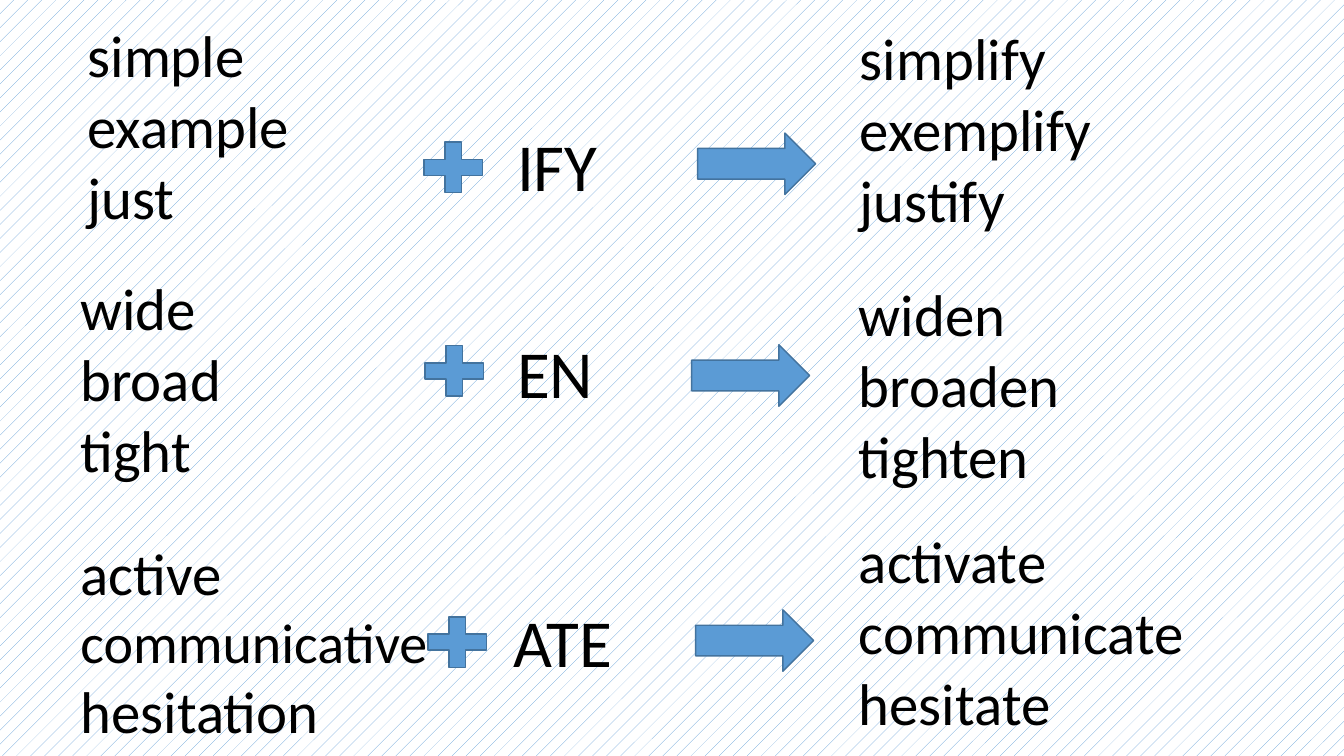
from pptx import Presentation
from pptx.dml.color import RGBColor
from pptx.enum.dml import MSO_PATTERN as Pattern
from pptx.enum.shapes import MSO_SHAPE as Shape
from pptx.util import Pt

PX = 9144  # 100 px to the inch
BLUE, EDGE, BLACK, WHITE = "5B9BD5", "43739E", "000000", "FFFFFF"

# Base words, suffix and new words, each with its left, top (and width)
ROWS = [
    dict(base=("simple\nexample\njust", 77, 14, 354), plus=(410, 132),
         suffix=("IFY", 503, 118), arrow=(692, 132),
         verbs=("simplify\nexemplify\njustify", 843, 17)),
    dict(base=("wide\nbroad\ntight", 70, 265, 285), plus=(411, 334),
         suffix=("EN", 503, 324), arrow=(686, 342),
         verbs=("widen\nbroaden\ntighten", 842, 271)),
    dict(base=("active\ncommunicative\nhesitation", 70, 528, 667), plus=(414, 603),
         suffix=("ATE", 499, 591), arrow=(690, 605),
         verbs=("activate\ncommunicate\nhesitate", 842, 516)),
]


def color(code):
    return RGBColor.from_string(code)


def px(*sizes):
    return [size * PX for size in sizes]


def add_text(slide, words, left, top, width, height, size):
    box = slide.shapes.add_textbox(*px(left, top, width, height))
    frame = box.text_frame
    frame.word_wrap = True
    frame.text = words
    for para in frame.paragraphs:
        for run in para.runs:
            run.font.name = "Calibri"
            run.font.size = Pt(size)
            run.font.color.rgb = color(BLACK)
    return frame


def add_sign(slide, kind, left, top, width, height):
    sign = slide.shapes.add_shape(kind, *px(left, top, width, height))
    sign.shadow.inherit = False
    sign.fill.solid()
    sign.fill.fore_color.rgb = color(BLUE)
    sign.line.color.rgb = color(EDGE)
    sign.line.width = Pt(1)


def add_row(slide, base, plus, suffix, arrow, verbs):
    frame = add_text(slide, *base, 222, 42)
    # The longest word is set a little smaller
    for para in frame.paragraphs:
        if para.text == "communicative":
            para.runs[0].font.size = Pt(40)
    add_text(slide, *suffix, 120, 91, 48)
    add_text(slide, *verbs, 480, 222, 42)
    add_sign(slide, Shape.RIGHT_ARROW, *arrow, 117, 61)
    add_sign(slide, Shape.MATH_PLUS, *plus, 79, 68)


def main():
    deck = Presentation()
    deck.slide_width, deck.slide_height = px(1333, 750)
    slide = deck.slides.add_slide(deck.slide_layouts[6])

    # Patterned background
    fill = slide.background.fill
    fill.patterned()
    fill.pattern = Pattern.PERCENT_5
    fill.fore_color.rgb = color(BLUE)
    fill.back_color.rgb = color(WHITE)

    # One row for each suffix
    for row in ROWS:
        add_row(slide, **row)
    deck.save("out.pptx")


if __name__ == "__main__":
    main()
